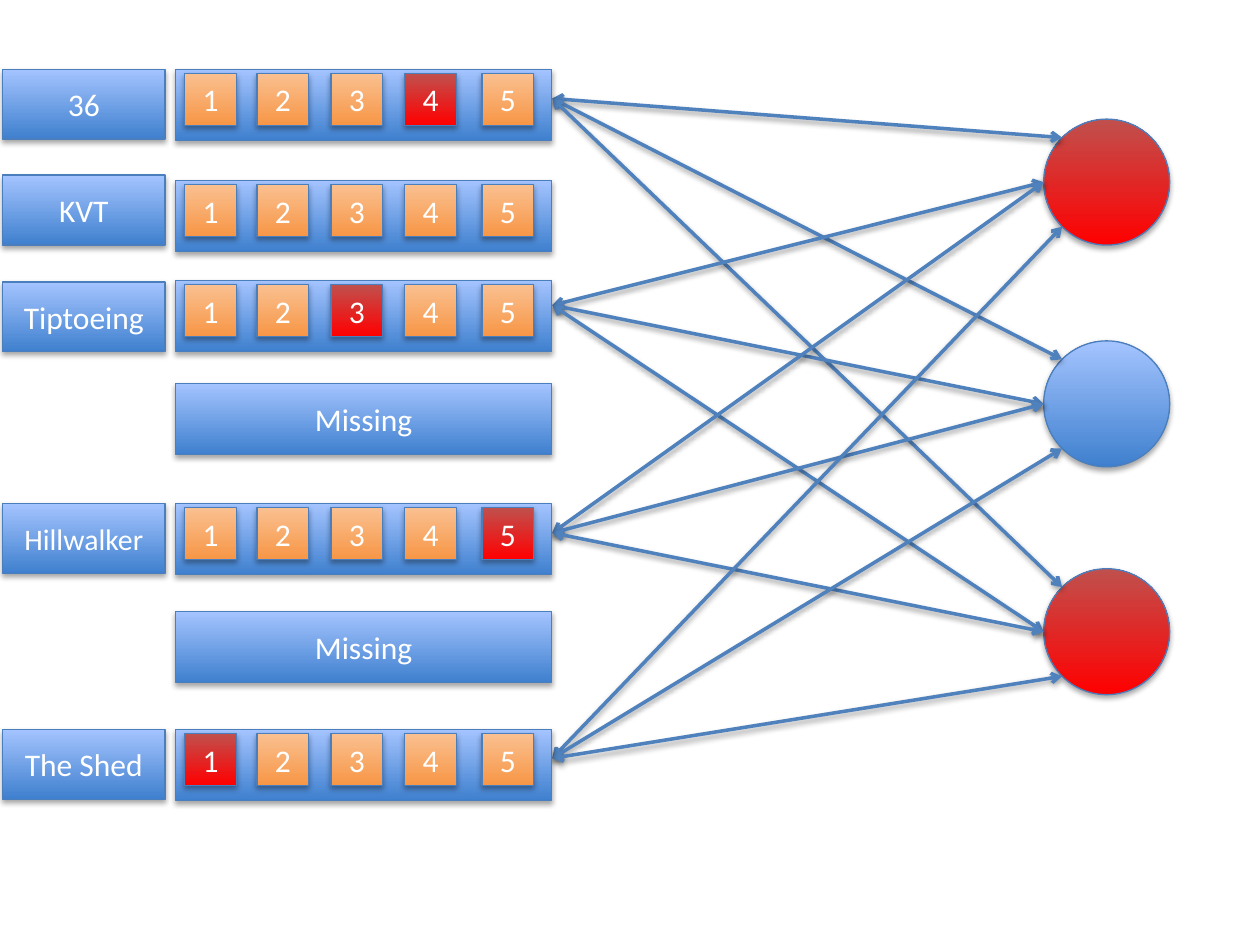
import math
from dataclasses import dataclass

import pptx
import pptx.dml.color
import pptx.enum.shapes
import pptx.enum.text
import pptx.oxml
import pptx.oxml.ns
import pptx.util

Pt = pptx.util.Pt
SHAPE = pptx.enum.shapes.MSO_SHAPE


def rgb(value):
    return pptx.dml.color.RGBColor.from_string(value)


@dataclass(frozen=True)
class Theme:
    # Gradients run from the bottom colour to the top colour
    blue: tuple = ("3F80CE", "A4C4FF")
    orange: tuple = ("F79646", "FAC090")
    red: tuple = ("FF0000", "C0504D")
    outline: str = "4B7EBC"
    arrow: str = "4F81BD"
    text: str = "FFFFFF"
    font: str = "Calibri"
    size: int = 18
    small_size: int = 17


def write_text(shape, text, *, font, size, color):
    """Write one centred line in the middle of a shape."""
    frame = shape.text_frame
    frame.word_wrap = True
    frame.vertical_anchor = pptx.enum.text.MSO_ANCHOR.MIDDLE
    paragraph = frame.paragraphs[0]
    paragraph.alignment = pptx.enum.text.PP_ALIGN.CENTER
    run = paragraph.add_run()
    run.text = text
    run.font.name = font
    run.font.size = Pt(size)
    run.font.color.rgb = rgb(color)


def add_shadow(properties, distance, opacity):
    """Add a soft downward shadow to shape properties."""
    effects = properties.find(pptx.oxml.ns.qn("a:effectLst"))
    if effects is None:
        effects = pptx.oxml.parse_xml(f'<a:effectLst {pptx.oxml.ns.nsdecls("a")}/>')
        properties.append(effects)
    effects.append(pptx.oxml.parse_xml(
        f'<a:outerShdw {pptx.oxml.ns.nsdecls("a")} blurRad="40000" dist="{distance}" '
        f'dir="5400000" rotWithShape="0"><a:srgbClr val="000000">'
        f'<a:alpha val="{opacity * 1000}"/></a:srgbClr></a:outerShdw>'))


class Diagram:
    def __init__(self, slide, theme):
        self.slide = slide
        self.theme = theme

    def block(self, kind, left, top, width, height, gradient, text=None, size=None):
        shape = self.slide.shapes.add_shape(
            kind, Pt(left), Pt(top), Pt(width), Pt(height))
        shape.fill.gradient()
        shape.fill.gradient_angle = 90
        for stop, color in zip(shape.fill.gradient_stops, gradient):
            stop.color.rgb = rgb(color)
        shape.line.color.rgb = rgb(self.theme.outline)
        shape.line.width = Pt(0.75)
        shape.shadow.inherit = False
        add_shadow(shape._element.spPr, 23000, 35)
        if text:
            write_text(shape, text, font=self.theme.font,
                       size=size or self.theme.size, color=self.theme.text)

    def double_arrow(self, start, end):
        connector = self.slide.shapes.add_connector(
            pptx.enum.shapes.MSO_CONNECTOR.STRAIGHT,
            *(Pt(value) for value in (*start, *end)))
        connector.line.color.rgb = rgb(self.theme.arrow)
        connector.line.width = Pt(2)
        properties = connector._element.spPr
        line = properties.find(pptx.oxml.ns.qn("a:ln"))
        for tag in ("headEnd", "tailEnd"):
            line.append(pptx.oxml.parse_xml(
                f'<a:{tag} {pptx.oxml.ns.nsdecls("a")} type="arrow"/>'))
        add_shadow(properties, 20000, 38)

    def rating_row(self, top, chosen):
        self.block(SHAPE.RECTANGLE, ROW_LEFT, top, ROW_WIDTH, ROW_HEIGHT, self.theme.blue)
        for rating, left in enumerate(CELL_LEFTS, 1):
            gradient = self.theme.red if rating == chosen else self.theme.orange
            self.block(SHAPE.RECTANGLE, left, top + 2.4, CELL_SIZE, CELL_SIZE,
                       gradient, str(rating))

    def missing_row(self, top):
        self.block(SHAPE.RECTANGLE, ROW_LEFT, top, ROW_WIDTH, ROW_HEIGHT,
                   self.theme.blue, "Missing")

    def label(self, text, top, size):
        self.block(SHAPE.RECTANGLE, 1.4, top, 93, 39.9, self.theme.blue, text, size)


THEME = Theme()
ROW_LEFT, ROW_WIDTH, ROW_HEIGHT = 100.3, 214.9, 40.6
CELL_LEFTS = (105.6, 146.9, 189.1, 231.3, 275.5)
CELL_SIZE = 29.6
CIRCLE_LEFT, DIAMETER = 596.4, 72
CIRCLES = ((68.1, THEME.red), (194.8, THEME.blue), (325, THEME.red))

# Title, row top, label top, chosen rating, label size
RATINGS = (
    ("36", 39.6, 39.6, 4, THEME.size),
    ("KVT", 103.1, 100.1, None, THEME.size),
    ("Tiptoeing", 160.3, 161.1, 3, THEME.size),
    ("Hillwalker", 287.8, 287.8, 5, THEME.small_size),
    ("The Shed", 416.8, 416.8, 1, THEME.size),
)
MISSING_TOPS = (219.1, 349.4)

# Height where each rated row's arrows start, and the angle where they meet a circle
ARROWS = ((56.3, 45), (174.4, 0), (304.5, 0), (433.3, -45))


def main():
    presentation = pptx.Presentation()
    presentation.slide_width, presentation.slide_height = Pt(720), Pt(540)
    slide = presentation.slides.add_slide(presentation.slide_layouts[6])
    diagram = Diagram(slide, THEME)

    # Hidden units
    for top, gradient in CIRCLES:
        diagram.block(SHAPE.OVAL, CIRCLE_LEFT, top, DIAMETER, DIAMETER, gradient)

    # Arrows between rated rows and hidden units
    radius = DIAMETER / 2
    for start_y, angle in ARROWS:
        turn = math.radians(angle)
        for top, _ in CIRCLES:
            end = (CIRCLE_LEFT + radius * (1 - math.cos(turn)),
                   top + radius * (1 - math.sin(turn)))
            diagram.double_arrow((315.6, start_y), end)

    # Visible units
    for _, top, _, chosen, _ in RATINGS:
        diagram.rating_row(top, chosen)
    for top in MISSING_TOPS:
        diagram.missing_row(top)

    # Titles
    for title, _, top, _, size in RATINGS:
        diagram.label(title, top, size)

    presentation.save("out.pptx")


if __name__ == "__main__":
    main()
